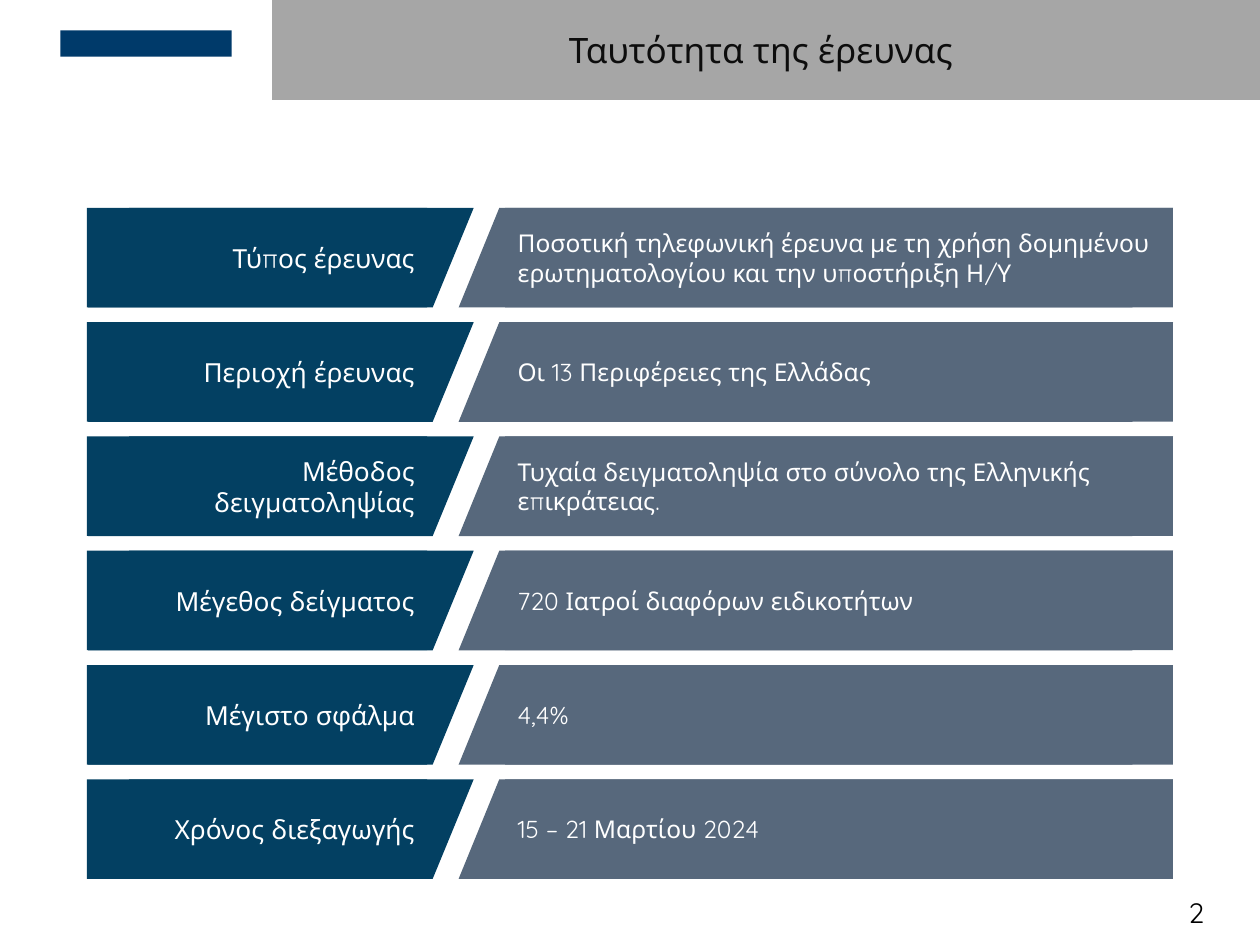
from dataclasses import dataclass

from pptx import Presentation
from pptx.dml.color import RGBColor
from pptx.enum.shapes import MSO_SHAPE
from pptx.enum.text import MSO_ANCHOR, PP_ALIGN
from pptx.util import Inches, Pt

RECT, SLANTED = MSO_SHAPE.RECTANGLE, MSO_SHAPE.PARALLELOGRAM
LEFT, CENTER, RIGHT = PP_ALIGN.LEFT, PP_ALIGN.CENTER, PP_ALIGN.RIGHT
MIDDLE = MSO_ANCHOR.MIDDLE

FONT = "Quicksand"
COLORS = {
    "banner": "A6A6A6",
    "title": "0D0D0D",
    "label": "034062",
    "detail": "57687C",
    "light": "FFFFFF",
    "number": "000000",
    "logo": "003A6A",
}
SLIDE_W, SLIDE_H = 10, 7.5
BAND_H = 0.79
ROWS_TOP, ROW_PITCH = 1.65, 0.907


@dataclass(frozen=True)
class Column:
    """A slanted band with a text block that squares off its outer end."""
    color: str
    slant_x: float
    slant_w: float
    slant: float
    block_x: float
    block_w: float
    size: int
    align: PP_ALIGN


@dataclass(frozen=True)
class Row:
    label: str
    detail: str


LABELS = Column("label", 0.7, 3.06, 0.412, 0.69, 2.7, 15, RIGHT)
DETAILS = Column("detail", 3.64, 5.67, 0.409, 4.01, 5.3, 14, LEFT)

ROWS = [
    Row("Τύπος έρευνας",
        "Ποσοτική τηλεφωνική έρευνα με τη χρήση δομημένου "
        "ερωτηματολογίου και την υποστήριξη Η/Υ"),
    Row("Περιοχή έρευνας", "Οι 13 Περιφέρειες της Ελλάδας"),
    Row("Μέθοδος δειγματοληψίας",
        "Τυχαία δειγματοληψία στο σύνολο της Ελληνικής επικράτειας."),
    Row("Μέγεθος δείγματος", "720 Ιατροί διαφόρων ειδικοτήτων"),
    Row("Μέγιστο σφάλμα", "4,4%"),
    Row("Χρόνος διεξαγωγής", "15 – 21 Μαρτίου 2024"),
]


def rgb(name: str) -> RGBColor:
    return RGBColor.from_string(COLORS[name])


def add_block(shapes, kind: MSO_SHAPE, x: float, y: float, w: float,
              h: float, color: str):
    """Add a flat filled shape without outline or shadow."""
    sp = shapes.add_shape(kind, Inches(x), Inches(y), Inches(w), Inches(h))
    sp.shadow.inherit = False
    sp.fill.solid()
    sp.fill.fore_color.rgb = rgb(color)
    sp.line.fill.background()
    return sp


def set_text(sp, text: str, size: int, color: str, align: PP_ALIGN) -> None:
    tf = sp.text_frame
    tf.word_wrap = True
    tf.vertical_anchor = MIDDLE
    tf.text = text
    p = tf.paragraphs[0]
    p.alignment = align
    font = p.runs[0].font
    font.name, font.size = FONT, Pt(size)
    font.color.rgb = rgb(color)


def add_slanted(shapes, col: Column, y: float) -> None:
    sp = add_block(shapes, SLANTED, col.slant_x, y, col.slant_w, BAND_H,
                   col.color)
    sp.adjustments[0] = col.slant


def add_text_block(shapes, col: Column, y: float, text: str) -> None:
    sp = add_block(shapes, RECT, col.block_x, y, col.block_w, BAND_H,
                   col.color)
    set_text(sp, text, col.size, "light", col.align)


def add_row(s, row: Row, y: float) -> None:
    shapes = s.shapes.add_group_shape().shapes
    for col in (LABELS, DETAILS):
        add_slanted(shapes, col, y)
    add_text_block(shapes, LABELS, y, row.label)
    add_text_block(shapes, DETAILS, y, row.detail)


def add_title(s) -> None:
    sp = add_block(s.shapes, SLANTED, 2.16, 0, 7.86, BAND_H, "banner")
    sp.adjustments[0] = 0
    sp.text_frame.margin_right = Inches(0.2)
    set_text(sp, "Ταυτότητα της έρευνας", 20, "title", CENTER)


def add_page_number(s) -> None:
    w, h = 1.01, 0.52
    sp = s.shapes.add_textbox(Inches(SLIDE_W - w), Inches(SLIDE_H - h),
                              Inches(w), Inches(h))
    set_text(sp, "2", 16, "number", CENTER)


def main() -> None:
    prs = Presentation()
    prs.slide_width, prs.slide_height = Inches(SLIDE_W), Inches(SLIDE_H)
    s = prs.slides.add_slide(prs.slide_layouts[6])
    add_title(s)
    add_page_number(s)
    for i, row in enumerate(ROWS):
        add_row(s, row, ROWS_TOP + i * ROW_PITCH)
    add_block(s.shapes, RECT, 0.48, 0.24, 1.36, 0.21, "logo")
    prs.save("out.pptx")


if __name__ == "__main__":
    main()
